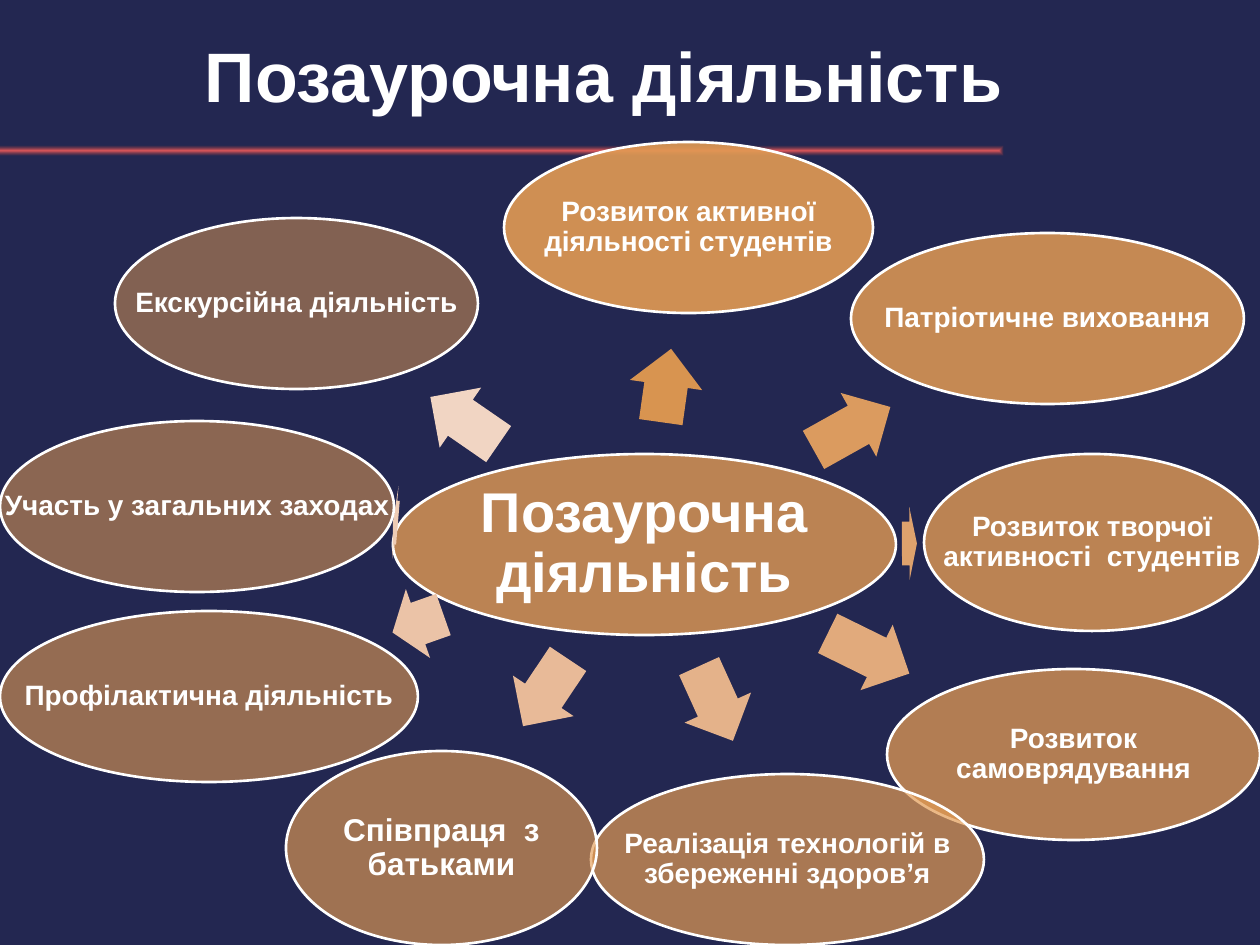
from dataclasses import dataclass

from lxml import etree
from pptx import Presentation
from pptx import util as u
from pptx.dml.color import RGBColor
from pptx.enum import shapes, text
from pptx.oxml.ns import qn

PX = u.Inches(1) / 126


@dataclass(frozen=True)
class Theme:
    font: str = "Arial"
    night: str = "232751"
    white: str = "FFFFFF"
    amber: str = "E29B54"
    rail_core: str = "DE585B"
    rail_edge: str = "9F3F41"
    title_size: int = 40
    hub_size: int = 32
    topic_size: int = 16
    partner_size: int = 18


THEME = Theme()
HEADING = "Позаурочна діяльність"
ARROW_HEIGHT = 73
HUB = (393, 454, 503, 181)

TOPICS = [
    ("Розвиток активної діяльності студентів", (504, 142, 369, 171), THEME.topic_size,
     (629, 349, 74), 278, "D89450"),
    ("Патріотичне виховання", (851, 233, 393, 171), THEME.topic_size,
     (808, 392, 88), 330.8, "DB9B5F"),
    ("Розвиток творчої активності  студентів", (924, 454, 336, 177), THEME.topic_size,
     (902, 507, 15), 359.7, "DEA26D"),
    ("Розвиток самоврядування", (887, 669, 373, 171), THEME.topic_size,
     (823, 617, 91), 26.2, "E1AA7C"),
    ("Реалізація технологій в збереженні здоров’я", (591, 774, 393, 171), THEME.topic_size,
     (675, 667, 82), 65.6, "E4B28A"),
    ("Співпраця  з батьками", (286, 751, 311, 194), THEME.partner_size,
     (505, 656, 81), 123.8, "E8BA98"),
    ("Профілактична діяльність", (0, 611, 418, 171), THEME.topic_size,
     (391, 587, 54), 160.6, "EBC3A7"),
    ("Участь у загальних заходах", (0, 421, 394, 171), THEME.topic_size,
     (393, 486, 5), 184.8, "EECCB5"),
    ("Екскурсійна діяльність", (115, 218, 363, 171), THEME.topic_size,
     (423, 384, 83), 214.6, "F1D5C3"),
]


def emu(box):
    return [round(length * PX) for length in box]


def rgb(color):
    return RGBColor.from_string(color)


def set_opacity(color_element, percent):
    etree.SubElement(color_element, qn("a:alpha")).set("val", str(percent * 1000))


def write(frame, wording, size, inset):
    frame.text = wording
    frame.word_wrap = True
    frame.vertical_anchor = text.MSO_ANCHOR.MIDDLE
    frame.margin_left = frame.margin_right = round(inset * PX)
    frame.margin_top = frame.margin_bottom = round(inset * PX)
    line = frame.paragraphs[0]
    line.alignment = text.PP_ALIGN.CENTER
    font = line.runs[0].font
    font.name, font.size, font.bold = THEME.font, u.Pt(size), True
    font.color.rgb = rgb(THEME.white)
    return line


def add_plain(slide, kind, box):
    outline = slide.shapes.add_shape(kind, *emu(box))
    outline.shadow.inherit = False
    outline.line.fill.background()
    return outline


def add_title(slide):
    title = slide.shapes.title
    title.left, title.top, title.width, title.height = emu((63, 23, 1081, 103))
    write(title.text_frame, HEADING, THEME.title_size, 6)


def add_rail(slide):
    rail = add_plain(slide, shapes.MSO_SHAPE.RECTANGLE, (-4, 146, 1008, 10))
    rail.fill.gradient()
    for stop, color in zip(rail.fill.gradient_stops, (THEME.rail_core, THEME.rail_edge)):
        stop.color.rgb = rgb(color)
    gradient = rail._element.spPr.find(qn("a:gradFill"))
    set_opacity(gradient.findall(".//" + qn("a:srgbClr"))[-1], 0)
    gradient.remove(gradient.find(qn("a:lin")))
    spread = etree.SubElement(gradient, qn("a:path"))
    spread.set("path", "shape")
    focus = etree.SubElement(spread, qn("a:fillToRect"))
    for side in "ltrb":
        focus.set(side, "50000")


def add_bubble(slide, wording, box, size, opacity, inset):
    bubble = add_plain(slide, shapes.MSO_SHAPE.OVAL, box)
    bubble.fill.solid()
    bubble.fill.fore_color.rgb = rgb(THEME.amber)
    set_opacity(bubble._element.spPr.find(qn("a:solidFill"))[0], opacity)
    bubble.line.color.rgb = rgb(THEME.white)
    bubble.line.width = u.Pt(1.5)
    label = slide.shapes.add_textbox(*emu(box))
    write(label.text_frame, wording, size, inset).line_spacing = 0.9


def add_arrow(slide, place, angle, color):
    arrow = add_plain(slide, shapes.MSO_SHAPE.RIGHT_ARROW, (*place, ARROW_HEIGHT))
    arrow.adjustments[0] = 0.6
    arrow.adjustments[1] = 0.5
    arrow.rotation = angle
    arrow.fill.solid()
    arrow.fill.fore_color.rgb = rgb(color)


def main():
    deck = Presentation()
    deck.slide_width, deck.slide_height = emu((1260, 945))
    slide = deck.slides.add_slide(deck.slide_layouts[5])
    slide.background.fill.solid()
    slide.background.fill.fore_color.rgb = rgb(THEME.night)
    add_title(slide)
    add_rail(slide)
    add_bubble(slide, HEADING, HUB, THEME.hub_size, 80, 5)
    for order, (wording, box, size, place, angle, color) in enumerate(TOPICS):
        add_arrow(slide, place, angle, color)
        add_bubble(slide, wording, box, size, 90 - 5 * order, 2)
    deck.save("out.pptx")


if __name__ == "__main__":
    main()
